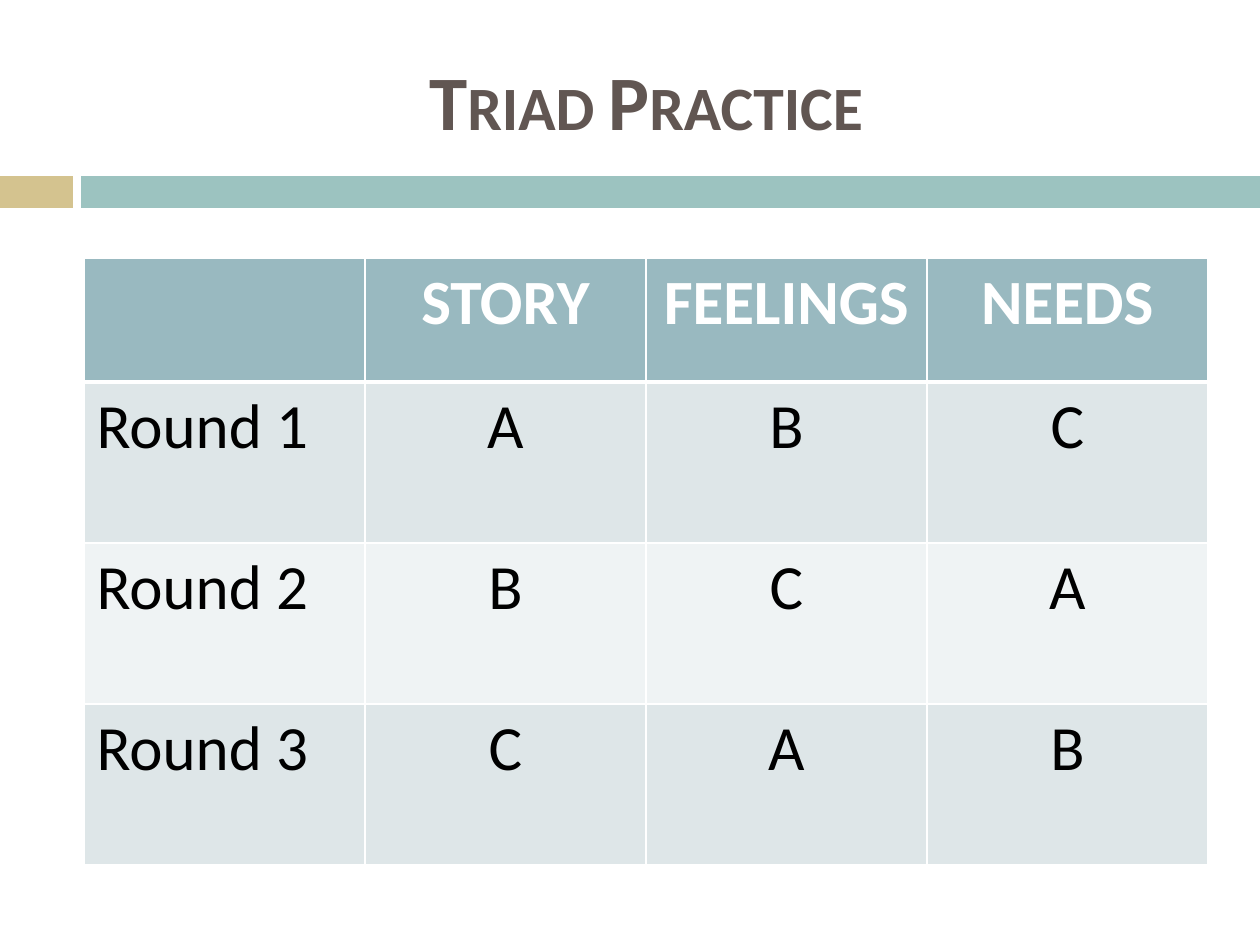
"""Build the Triad Practice slide: a title, a two-colour bar and a table of rounds."""
import lxml.etree
import pptx
import pptx.dml.color
import pptx.enum.shapes
import pptx.enum.text
import pptx.oxml.ns
import pptx.util

RGB = pptx.dml.color.RGBColor
ALIGN = pptx.enum.text.PP_ALIGN
WHITE = RGB(0xFF, 0xFF, 0xFF)
BLACK = RGB(0x00, 0x00, 0x00)
BROWN = RGB(0x61, 0x56, 0x52)
SAND = RGB(0xD4, 0xC3, 0x8F)
TEAL = RGB(0x9C, 0xC3, 0xC0)
HEADER = RGB(0x99, 0xB9, 0xC0)
BAND_DARK = RGB(0xDE, 0xE6, 0xE8)
BAND_LIGHT = RGB(0xEF, 0xF3, 0xF4)

PX_PER_INCH = 126
TITLE = {"size": pptx.util.Pt(44), "bold": True}
HEAD = {"size": pptx.util.Pt(36), "bold": True}
BODY = {"size": pptx.util.Pt(36), "bold": False}

ROWS = [
    ["", "STORY", "FEELINGS", "NEEDS"],
    ["Round 1", "A", "B", "C"],
    ["Round 2", "B", "C", "A"],
    ["Round 3", "C", "A", "B"],
]


def px(n):
    return pptx.util.Emu(round(n * 914400 / PX_PER_INCH))


class Deck:
    def __init__(self, width, height, font):
        self.prs = pptx.Presentation()
        self.prs.slide_width, self.prs.slide_height = px(width), px(height)
        self.font = font
        self.s = self.prs.slides.add_slide(self.prs.slide_layouts[5])

    def text(self, tf, words, color, style, align):
        p = tf.paragraphs[0]
        p.alignment = align
        r = p.add_run()
        r.text = words
        for name, value in {"name": self.font, **style}.items():
            setattr(r.font, name, value)
        r.font.color.rgb = color
        return r

    def bar(self, x, y, w, h, color):
        sp = self.s.shapes.add_shape(
            pptx.enum.shapes.MSO_SHAPE.RECTANGLE, px(x), px(y), px(w), px(h))
        sp.shadow.inherit = False
        sp.fill.solid()
        sp.fill.fore_color.rgb = color
        sp.line.fill.background()

    def title(self, x, y, w, h, words):
        sp = self.s.shapes.title
        sp.left, sp.top, sp.width, sp.height = px(x), px(y), px(w), px(h)
        tf = sp.text_frame
        tf.auto_size = pptx.enum.text.MSO_AUTO_SIZE.NONE
        tf.vertical_anchor = pptx.enum.text.MSO_ANCHOR.MIDDLE
        r = self.text(tf, words, BROWN, TITLE, ALIGN.CENTER)
        r._r.get_or_add_rPr().set("cap", "small")

    def border(self, cell, side, points):
        qn = pptx.oxml.ns.qn
        tc_pr = cell._tc.get_or_add_tcPr()
        ln = lxml.etree.SubElement(
            tc_pr, qn(f"a:ln{side}"), w=str(pptx.util.Pt(points)))
        fill = lxml.etree.SubElement(ln, qn("a:solidFill"))
        lxml.etree.SubElement(fill, qn("a:srgbClr"), val=str(WHITE))

    def table(self, x, y, w, heights, rows):
        t = self.s.shapes.add_table(
            len(rows), len(rows[0]), px(x), px(y), px(w), px(sum(heights))).table
        for i, (height, row) in enumerate(zip(heights, rows)):
            t.rows[i].height = px(height)
            fill = HEADER if i == 0 else BAND_DARK if i % 2 else BAND_LIGHT
            color, style = (WHITE, HEAD) if i == 0 else (BLACK, BODY)
            widths = {"L": 1, "R": 1, "T": 3 if i == 1 else 1, "B": 3 if i == 0 else 1}
            for j, words in enumerate(row):
                cell = t.cell(i, j)
                for side, points in widths.items():
                    self.border(cell, side, points)
                cell.fill.solid()
                cell.fill.fore_color.rgb = fill
                if words:
                    align = ALIGN.CENTER if j else ALIGN.LEFT
                    self.text(cell.text_frame, words, color, style, align)


def main():
    deck = Deck(1260, 945, "Calibri")
    deck.bar(0, 176, 73, 32, SAND)
    deck.bar(81, 176, 1179, 32, TEAL)
    deck.title(84, 32, 1124, 136, "Triad Practice")
    deck.table(84, 258, 1124, [124, 161, 161, 161], ROWS)
    deck.prs.save("out.pptx")


if __name__ == "__main__":
    main()
